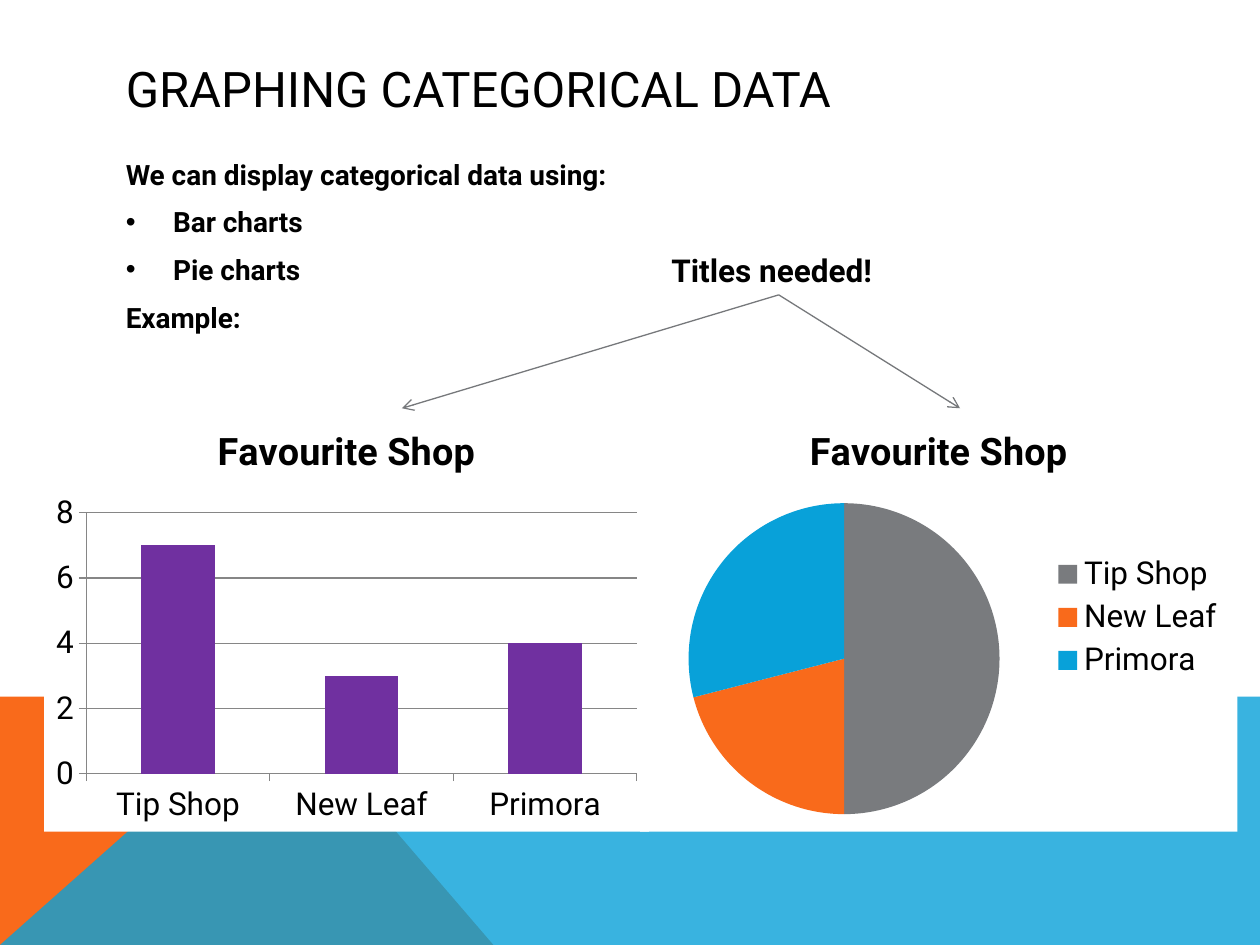
from lxml import etree
from pptx import Presentation
from pptx.chart.data import CategoryChartData
from pptx.dml.color import RGBColor
from pptx.enum.chart import XL_CHART_TYPE, XL_LEGEND_POSITION, XL_TICK_MARK
from pptx.enum.shapes import MSO_CONNECTOR
from pptx.enum.text import MSO_ANCHOR
from pptx.oxml import parse_xml
from pptx.oxml.ns import nsdecls, qn
from pptx.util import Pt

COLORS = {
    "black": "000000",
    "white": "FFFFFF",
    "orange": "F96A1B",
    "blue": "08A1D9",
    "grey": "797B7E",
    "purple": "7030A0",
    "arrow": "76787B",
    "grid": "868686",
}
FONT = "Roboto"
SHOPS = ["Tip Shop", "New Leaf", "Primora"]
CHART_TITLE = "Favourite Shop"


def rgb(name):
    return RGBColor.from_string(COLORS[name])


def set_font(font, size, bold=False):
    font.name, font.size, font.bold = FONT, Pt(size), bold
    font.color.rgb = rgb("black")


def add_text(slide, text, box, size=16, bold=False, anchor=MSO_ANCHOR.TOP,
             before=0, bullets=(), hanging=()):
    """Each line of text is a paragraph; bullets and hanging hold line indexes."""
    tf = slide.shapes.add_textbox(*map(Pt, box)).text_frame
    tf.word_wrap = True
    tf.vertical_anchor = anchor
    for i, line in enumerate(text.split("\n")):
        p = tf.paragraphs[0] if i == 0 else tf.add_paragraph()
        p.space_before = Pt(before)
        r = p.add_run()
        r.text = line
        set_font(r.font, size, bold)
        pPr = p._p.get_or_add_pPr()
        if i in hanging or i in bullets:
            pPr.set("marL", str(Pt(27)))
            pPr.set("indent", str(-Pt(27)))
        if i in bullets:
            etree.SubElement(pPr, qn("a:buFont")).set("typeface", "Arial")
            etree.SubElement(pPr, qn("a:buChar")).set("char", "•")


def add_polygon(slide, points, color, opacity=100):
    builder = slide.shapes.build_freeform(*points[0], scale=Pt(1))
    builder.add_line_segments(points[1:], close=True)
    sp = builder.convert_to_shape()
    sp.shadow.inherit = False
    sp.fill.solid()
    sp.fill.fore_color.rgb = rgb(color)
    sp.line.fill.background()
    if opacity < 100:
        clr = sp._element.spPr.find(qn("a:solidFill"))[0]
        etree.SubElement(clr, qn("a:alpha")).set("val", str(opacity * 1000))


def add_arrow(slide, start, end):
    line = slide.shapes.add_connector(
        MSO_CONNECTOR.STRAIGHT, *map(Pt, start + end))
    line.line.color.rgb = rgb("arrow")
    line.line.width = Pt(0.75)
    etree.SubElement(line.line._get_or_add_ln(), qn("a:tailEnd")).set("type", "arrow")
    etree.SubElement(line._element.spPr, qn("a:effectLst"))


def add_chart(slide, kind, values, box):
    data = CategoryChartData()
    data.categories = SHOPS
    data.add_series("Series 1", values)
    chart = slide.shapes.add_chart(kind, *map(Pt, box), data).chart
    set_font(chart.font, 18)
    chart.has_title = True
    tf = chart.chart_title.text_frame
    tf.text = CHART_TITLE
    set_font(tf.paragraphs[0].runs[0].font, 21.6, bold=True)
    chart.chart_title.include_in_layout = False
    chart.has_legend = False
    # White chart background
    chart._chartSpace.find(qn("c:txPr")).addprevious(parse_xml(
        f'<c:spPr {nsdecls("c", "a")}><a:solidFill><a:srgbClr val="{COLORS["white"]}"/>'
        '</a:solidFill><a:ln><a:noFill/></a:ln></c:spPr>'))
    return chart


def add_bar_chart(slide, values, box):
    chart = add_chart(slide, XL_CHART_TYPE.COLUMN_CLUSTERED, values, box)
    plot = chart.plots[0]
    plot.gap_width = 150
    plot.vary_by_categories = False
    fill = plot.series[0].format.fill
    fill.solid()
    fill.fore_color.rgb = rgb("purple")
    axis = chart.value_axis
    axis.minimum_scale, axis.maximum_scale, axis.major_unit = 0, 8, 2
    axis.has_major_gridlines = True
    for part in (axis, chart.category_axis, axis.major_gridlines):
        part.format.line.color.rgb = rgb("grid")
        part.format.line.width = Pt(0.75)
    for part in (axis, chart.category_axis):
        part.major_tick_mark = XL_TICK_MARK.OUTSIDE


def add_pie_chart(slide, values, box):
    chart = add_chart(slide, XL_CHART_TYPE.PIE, values, box)
    plot = chart.plots[0]
    plot.vary_by_categories = True
    for i, color in enumerate(("grey", "orange", "blue")):
        fill = plot.series[0].points[i].format.fill
        fill.solid()
        fill.fore_color.rgb = rgb(color)
    chart.has_legend = True
    chart.legend.position = XL_LEGEND_POSITION.RIGHT
    chart.legend.include_in_layout = False
    set_font(chart.legend.font, 18)


def main():
    prs = Presentation()
    prs.slide_width, prs.slide_height = Pt(720), Pt(540)
    slide = prs.slides.add_slide(prs.slide_layouts[6])

    # Bottom decoration
    top, bottom, peak = 397.5, 540, 160.5
    add_polygon(slide, [(0, bottom), (0, top), (peak, top), (281.5, bottom)], "orange")
    add_polygon(slide, [(0, bottom), (peak, top), (720, top), (720, bottom)],
                "blue", opacity=80)

    # Title and body
    add_text(slide, "GRAPHING CATEGORICAL DATA", (64.8, 28.8, 592, 43.2),
             size=28, anchor=MSO_ANCHOR.MIDDLE)
    add_text(slide,
             "We can display categorical data using:\nBar charts\nPie charts\nExample:",
             (64.8, 86.4, 592, 281.5), bold=True, before=8,
             bullets=(1, 2), hanging=(0,))

    # Charts
    add_bar_chart(slide, (7, 3, 4), (25.2, 230.4, 345.6, 244.8))
    add_pie_chart(slide, (50, 21, 29), (365.8, 230.4, 341.3, 244.8))

    # Note pointing at both chart titles
    add_text(slide, "Titles needed!", (376.6, 139.7, 136, 28.8), size=18, bold=True)
    for x in (229.7, 548.6):
        add_arrow(slide, (445, 168.5), (x, 233.3))

    prs.save("out.pptx")


if __name__ == "__main__":
    main()
